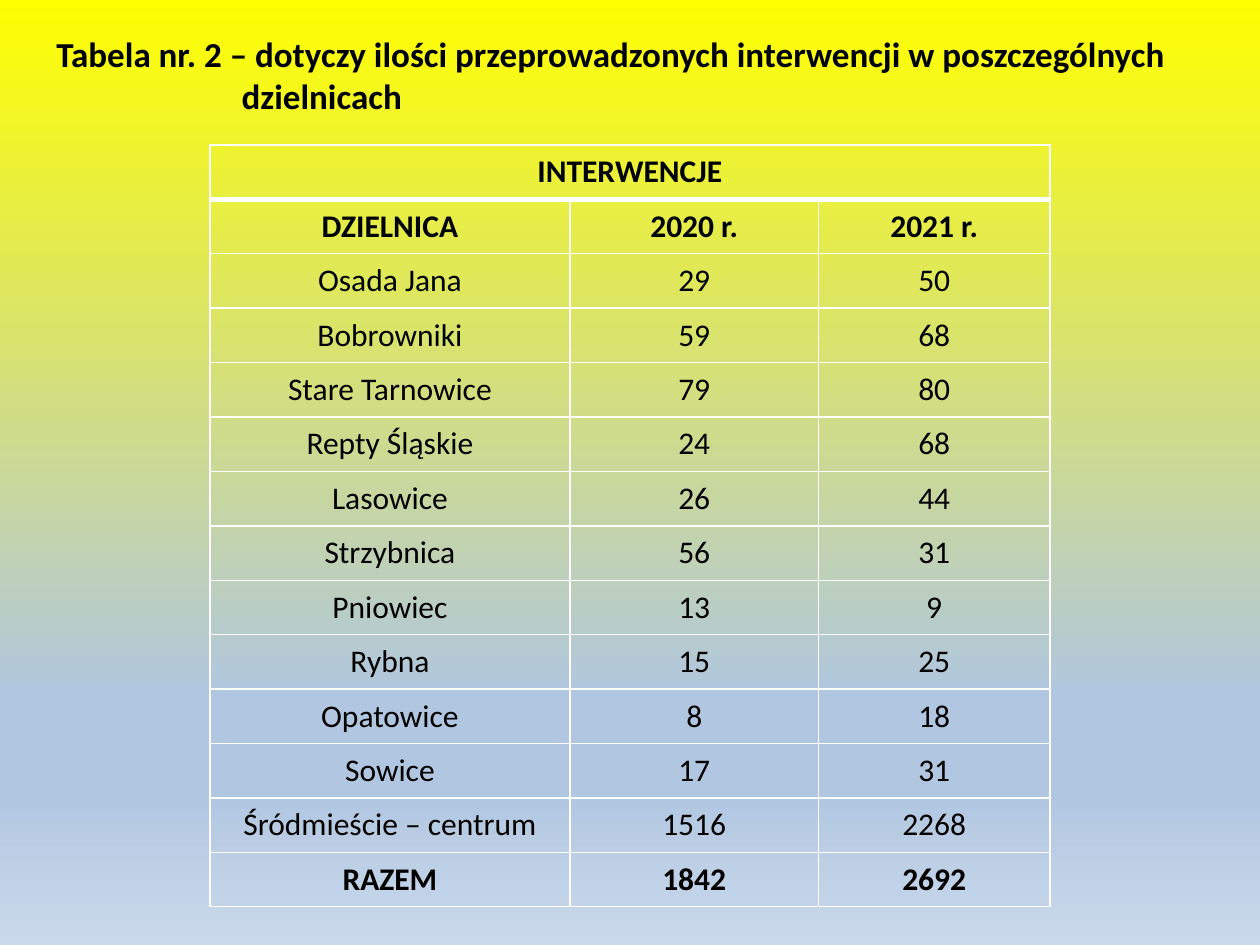
from lxml.etree import SubElement
from pptx import Presentation
from pptx.dml.color import RGBColor
from pptx.enum.text import MSO_ANCHOR, PP_ALIGN
from pptx.oxml import parse_xml
from pptx.oxml.ns import nsdecls, qn
from pptx.util import Inches, Pt

FONT = "Calibri"
BLACK = RGBColor(0x00, 0x00, 0x00)
WHITE = RGBColor(0xFF, 0xFF, 0xFF)
YELLOW = RGBColor(0xFF, 0xFF, 0x00)
BLUE = RGBColor(0xB0, 0xC6, 0xE1)
PALE_BLUE = RGBColor(0xCA, 0xD9, 0xEB)
BACKGROUND_STOPS = [(0, YELLOW), (74, BLUE), (83, BLUE), (100, PALE_BLUE)]

SLIDE_WIDTH, SLIDE_HEIGHT = Inches(10), Inches(7.5)
COLUMN_WIDTHS = [2.86, 1.97, 1.84]
ROW_HEIGHT = Inches(6.05 / 14)

TITLE = ("Tabela nr. 2 – dotyczy ilości przeprowadzonych interwencji "
         "w poszczególnych dzielnicach")
ROWS = [
    ("INTERWENCJE", "", ""),
    ("DZIELNICA", "2020 r.", "2021 r."),
    ("Osada Jana", 29, 50),
    ("Bobrowniki", 59, 68),
    ("Stare Tarnowice", 79, 80),
    ("Repty Śląskie", 24, 68),
    ("Lasowice", 26, 44),
    ("Strzybnica", 56, 31),
    ("Pniowiec", 13, 9),
    ("Rybna", 15, 25),
    ("Opatowice", 8, 18),
    ("Sowice", 17, 31),
    ("Śródmieście – centrum", 1516, 2268),
    ("RAZEM", 1842, 2692),
]
BOLD_ROWS = {0, 1, len(ROWS) - 1}


def paint_background(slide):
    """Vertical gradient with four stops."""
    fill = slide.background.fill
    fill.gradient()
    fill.gradient_angle = 270
    stop_list = next(slide.element.iter(qn("a:gsLst")))
    for stop in list(stop_list):
        stop_list.remove(stop)
    for percent, color in BACKGROUND_STOPS:
        stop = SubElement(stop_list, qn("a:gs"), pos=str(percent * 1000))
        SubElement(stop, qn("a:srgbClr"), val=str(color))


def format_text(para, size, bold):
    for span in para.runs:
        span.font.name = FONT
        span.font.size = Pt(size)
        span.font.bold = bold
        span.font.color.rgb = BLACK


def add_title(slide):
    box = slide.shapes.add_textbox(Inches(0.35), Inches(0.21),
                                   Inches(9.06), Inches(0.77))
    box.text_frame.word_wrap = True
    box.text_frame.text = TITLE
    para = box.text_frame.paragraphs[0]
    format_text(para, 20, True)
    # Hanging indent
    properties = para._p.get_or_add_pPr()
    properties.set("marL", str(Inches(1.47)))
    properties.set("indent", str(-Inches(1.47)))


def set_borders(cell, top=1, bottom=1):
    properties = cell._tc.get_or_add_tcPr()
    widths = {"lnL": 1, "lnR": 1, "lnT": top, "lnB": bottom}
    for index, (side, width) in enumerate(widths.items()):
        properties.insert(index, parse_xml(
            f'<a:{side} {nsdecls("a")} w="{Pt(width)}"><a:solidFill>'
            f'<a:srgbClr val="{WHITE}"/></a:solidFill></a:{side}>'))


def fill_cell(cell, value, bold):
    cell.fill.background()
    cell.vertical_anchor = MSO_ANCHOR.MIDDLE
    cell.text_frame.text = str(value)
    para = cell.text_frame.paragraphs[0]
    para.alignment = PP_ALIGN.CENTER
    format_text(para, 18, bold)


def add_district_table(slide):
    width = Inches(sum(COLUMN_WIDTHS))
    table = slide.shapes.add_table(
        len(ROWS), len(COLUMN_WIDTHS), (SLIDE_WIDTH - width) // 2,
        Inches(1.15), width, ROW_HEIGHT * len(ROWS)).table
    table.first_row = table.horz_banding = False
    for column, column_width in zip(table.columns, COLUMN_WIDTHS):
        column.width = Inches(column_width)
    for row_index, values in enumerate(ROWS):
        table.rows[row_index].height = ROW_HEIGHT
        for column_index, value in enumerate(values):
            cell = table.cell(row_index, column_index)
            fill_cell(cell, value, row_index in BOLD_ROWS)
            # Thick rule under the heading row
            set_borders(cell, top=3 if row_index == 1 else 1,
                        bottom=3 if row_index == 0 else 1)
    table.cell(0, 0).merge(table.cell(0, len(COLUMN_WIDTHS) - 1))


def main():
    deck = Presentation()
    deck.slide_width, deck.slide_height = SLIDE_WIDTH, SLIDE_HEIGHT
    slide = deck.slides.add_slide(deck.slide_layouts[6])
    paint_background(slide)
    add_district_table(slide)
    add_title(slide)
    deck.save("out.pptx")


if __name__ == "__main__":
    main()
